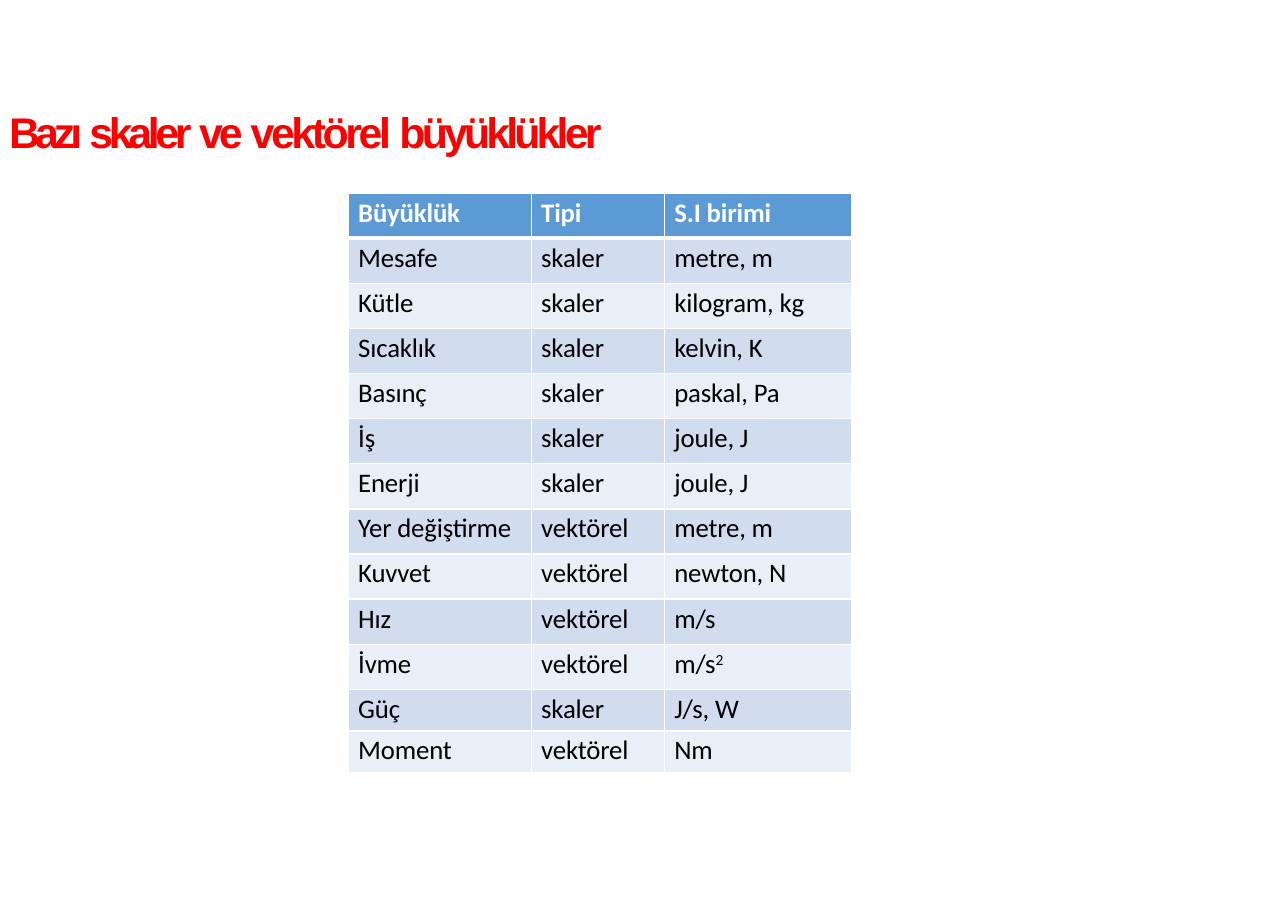
from typing import Any, NamedTuple

from lxml import etree
from pptx import Presentation, table, util as u
from pptx.dml import color
from pptx.enum import text
from pptx.oxml import ns

COLORS = {"title": "FF0000", "header": "5B9AD4", "odd": "D1DDEF",
          "even": "E9EFF6", "white": "FFFFFF", "black": "000000"}
TITLE_FONT = {"name": "Arial", "size": u.Pt(28), "bold": True}
CELL_FONT = {"name": "Calibri", "size": u.Pt(17.5), "bold": False}
HEADER_FONT = CELL_FONT | {"bold": True}


class Run(NamedTuple):
    text: str
    spacing: float = -0.1
    baseline: int = 0


class Quantity(NamedTuple):
    name: str
    kind: str
    unit: str
    exponent: str = ""


TITLE = [Run("Bazı ", -3.2), Run("skaler ", -2.8), Run("ve ", -2.6),
         Run("vektörel ", -2.2), Run("büyüklükler", -2.5)]
HEADER = Quantity("Büyüklük", "Tipi", "S.I birimi")
QUANTITIES = [
    Quantity("Mesafe", "skaler", "metre, m"),
    Quantity("Kütle", "skaler", "kilogram, kg"),
    Quantity("Sıcaklık", "skaler", "kelvin, K"),
    Quantity("Basınç", "skaler", "paskal, Pa"),
    Quantity("İş", "skaler", "joule, J"),
    Quantity("Enerji", "skaler", "joule, J"),
    Quantity("Yer değiştirme", "vektörel", "metre, m"),
    Quantity("Kuvvet", "vektörel", "newton, N"),
    Quantity("Hız", "vektörel", "m/s"),
    Quantity("İvme", "vektörel", "m/s", "2"),
    Quantity("Güç", "skaler", "J/s, W"),
    Quantity("Moment", "vektörel", "Nm"),
]
COLUMN_WIDTHS = [4.22, 3.07, 4.32]
ROW_HEIGHT, LAST_ROW_HEIGHT = 1.04, 0.96


def set_values(target: Any, values: dict[str, Any]) -> None:
    for name, value in values.items():
        setattr(target, name, value)


def write_runs(p: Any, runs: list[Run], font: dict[str, Any], hex_color: str,
               indent: float, space_before: float) -> None:
    set_values(p, {"alignment": text.PP_ALIGN.LEFT, "line_spacing": 1.0,
                   "space_before": u.Pt(space_before)})
    pPr = p._p.get_or_add_pPr()
    pPr.set("marL", str(u.Cm(indent)))
    pPr.set("indent", "0")
    for run in runs:
        r = p.add_run()
        r.text = run.text
        set_values(r.font, font)
        r.font.color.rgb = color.RGBColor.from_string(hex_color)
        rPr = r._r.get_or_add_rPr()
        rPr.set("spc", str(round(run.spacing * 100)))
        if run.baseline:
            rPr.set("baseline", str(run.baseline * 1000))


def add_borders(cell: table._Cell, top: float, bottom: float) -> None:
    tcPr = cell._tc.get_or_add_tcPr()
    for side, width in {"L": 1, "R": 1, "T": top, "B": bottom}.items():
        ln = etree.SubElement(tcPr, ns.qn(f"a:ln{side}"), w=str(u.Pt(width)))
        fill = etree.SubElement(ln, ns.qn("a:solidFill"))
        etree.SubElement(fill, ns.qn("a:srgbClr"), val=COLORS["white"])


def fill_row(tbl: table.Table, i: int, quantity: Quantity) -> None:
    is_header = i == 0
    band = "header" if is_header else "odd" if i % 2 else "even"
    font = HEADER_FONT if is_header else CELL_FONT
    ink = COLORS["white" if is_header else "black"]
    for j, words in enumerate(quantity[:3]):
        cell = tbl.cell(i, j)
        set_values(cell, {"margin_left": 0, "margin_right": 0, "margin_bottom": 0,
                          "margin_top": u.Cm(0.08),
                          "vertical_anchor": text.MSO_ANCHOR.TOP})
        add_borders(cell, top=3 if i == 1 else 1, bottom=3 if is_header else 1)
        cell.fill.solid()
        cell.fill.fore_color.rgb = color.RGBColor.from_string(COLORS[band])
        runs = [Run(words)]
        if j == 2 and quantity.exponent:
            runs.append(Run(quantity.exponent, 0, 27))
        write_runs(cell.text_frame.paragraphs[0], runs, font, ink, 0.23, 2)


def add_quantity_table(s: Any) -> None:
    rows = [HEADER, *QUANTITIES]
    heights = [ROW_HEIGHT] * (len(rows) - 2) + [LAST_ROW_HEIGHT] * 2
    tbl = s.shapes.add_table(len(rows), len(COLUMN_WIDTHS), u.Cm(8.03), u.Cm(4.45),
                             u.Cm(sum(COLUMN_WIDTHS)), u.Cm(sum(heights))).table
    for column, width in zip(tbl.columns, COLUMN_WIDTHS):
        column.width = u.Cm(width)
    for i, (quantity, height) in enumerate(zip(rows, heights)):
        tbl.rows[i].height = u.Cm(height)
        fill_row(tbl, i, quantity)


def format_title(s: Any) -> None:
    sp = s.shapes.title
    set_values(sp, {"left": u.Cm(0.18), "top": u.Cm(2.41),
                    "width": u.Cm(20.6), "height": u.Cm(1.27)})
    tf = sp.text_frame
    set_values(tf, {"margin_left": 0, "margin_right": 0, "margin_bottom": 0,
                    "margin_top": u.Cm(0.03), "word_wrap": True,
                    "vertical_anchor": text.MSO_ANCHOR.TOP,
                    "auto_size": text.MSO_AUTO_SIZE.SHAPE_TO_FIT_TEXT})
    write_runs(tf.paragraphs[0], TITLE, TITLE_FONT, COLORS["title"], 0.03, 1.1)


def main() -> None:
    prs = Presentation()
    set_values(prs, {"slide_width": u.Cm(29.7), "slide_height": u.Cm(21)})
    s = prs.slides.add_slide(prs.slide_layouts.get_by_name("Title Only"))
    format_title(s)
    add_quantity_table(s)
    prs.save("out.pptx")


if __name__ == "__main__":
    main()
